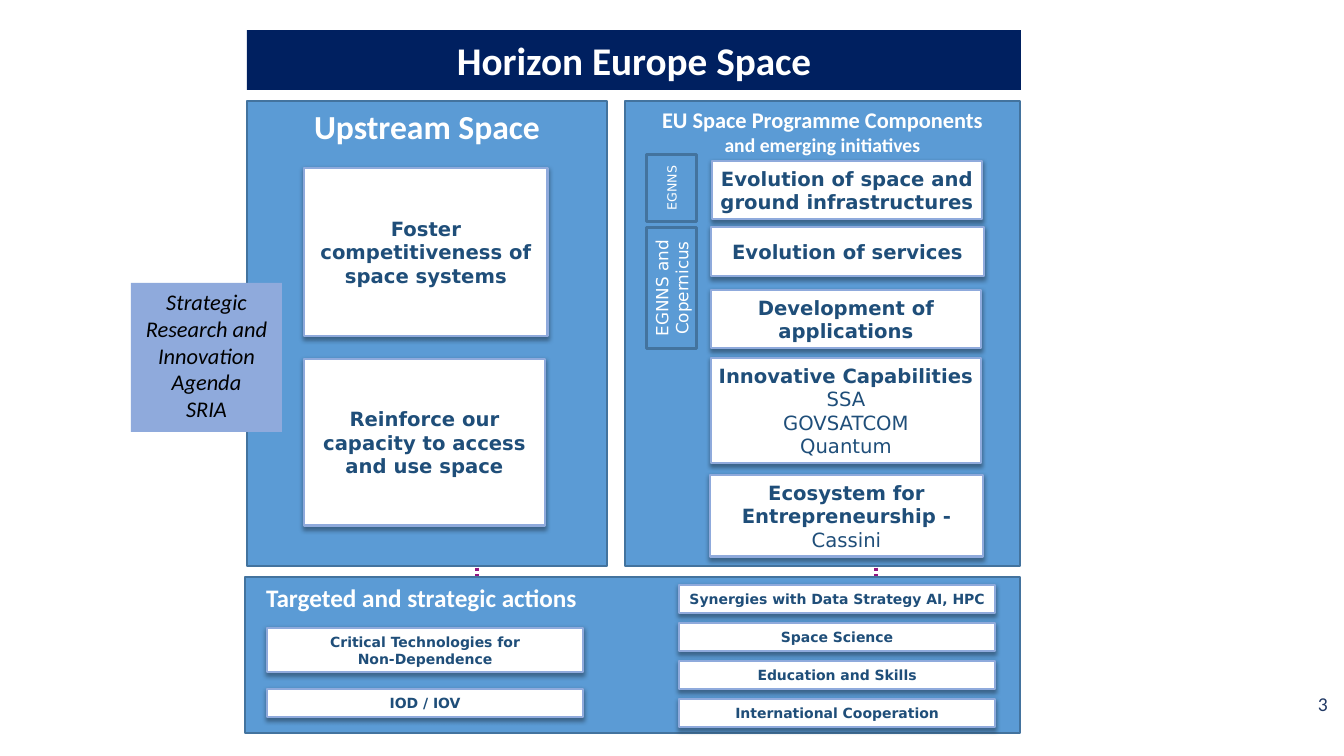
from dataclasses import dataclass

from lxml import etree
from pptx import Presentation
from pptx.dml.color import RGBColor
from pptx.enum.dml import MSO_LINE
from pptx.enum.shapes import MSO_CONNECTOR, MSO_SHAPE
from pptx.enum.text import MSO_ANCHOR, MSO_AUTO_SIZE, PP_ALIGN
from pptx.oxml.ns import qn
from pptx.util import Pt

RECT = MSO_SHAPE.RECTANGLE
STRAIGHT = MSO_CONNECTOR.STRAIGHT
DOTTED = MSO_LINE.ROUND_DOT
TOP, MIDDLE = MSO_ANCHOR.TOP, MSO_ANCHOR.MIDDLE
LEFT, CENTER, RIGHT = PP_ALIGN.LEFT, PP_ALIGN.CENTER, PP_ALIGN.RIGHT
NO_AUTOFIT = MSO_AUTO_SIZE.NONE
EMU_PER_PX = 914400 / 100.8


@dataclass(frozen=True)
class Theme:
    white: str = "FFFFFF"
    black: str = "000000"
    navy: str = "002060"
    panel: str = "5B9BD5"
    panel_edge: str = "43739E"
    card_edge: str = "8FAADC"
    card_text: str = "1F4E79"
    dots: str = "931680"
    number: str = "203864"
    heading_font: str = "Calibri"
    card_font: str = "DejaVu Sans"
    title: int = 28
    heading: int = 24
    subheading: int = 18
    body: int = 16
    card: int = 14
    label: int = 12
    action: int = 10
    small_label: int = 9


THEME = Theme()


def px(length):
    return round(length * EMU_PER_PX)


def rgb(color):
    return RGBColor.from_string(color)


def write(shape, *paragraphs, size, color=THEME.white, font=THEME.heading_font,
          bold=False, italic=False, align=CENTER, anchor=MIDDLE, insets=(10, 5, 10, 5)):
    """Each paragraph is a string or a list of (text, size, bold) runs."""
    frame = shape.text_frame
    frame.word_wrap = True
    frame.auto_size = NO_AUTOFIT
    frame.vertical_anchor = anchor
    (frame.margin_left, frame.margin_top,
     frame.margin_right, frame.margin_bottom) = map(px, insets)
    for index, content in enumerate(paragraphs):
        paragraph = frame.add_paragraph() if index else frame.paragraphs[0]
        paragraph.alignment = align
        runs = [(content, size, bold)] if isinstance(content, str) else content
        for text, run_size, run_bold in runs:
            run = paragraph.add_run()
            run.text = text
            run.font.name = font
            run.font.size = Pt(run_size)
            run.font.bold = run_bold
            run.font.italic = italic
            run.font.color.rgb = rgb(color)


def block(slide, box, fill=None, edge=None, width=1):
    shape = slide.shapes.add_shape(RECT, *map(px, box))
    shape.shadow.inherit = False
    if fill:
        shape.fill.solid()
        shape.fill.fore_color.rgb = rgb(fill)
    else:
        shape.fill.background()
    if edge:
        shape.line.color.rgb = rgb(edge)
        shape.line.width = Pt(width)
    else:
        shape.line.fill.background()
    return shape


def panel(slide, box):
    return block(slide, box, THEME.panel, THEME.panel_edge)


def card(slide, origin, place, *paragraphs, size=THEME.card):
    """White card with a soft shadow, placed relative to its panel."""
    x, y, width, height = place
    shape = block(slide, (origin[0] + x, origin[1] + y, width, height),
                  THEME.white, THEME.card_edge, 2)
    effects = shape._element.spPr.find(qn("a:effectLst"))
    shadow = etree.SubElement(effects, qn("a:outerShdw"), blurRad=str(Pt(3)),
                              dist=str(Pt(1.8)), dir="5400000", rotWithShape="0")
    shade = etree.SubElement(shadow, qn("a:srgbClr"), val=THEME.black)
    etree.SubElement(shade, qn("a:alpha"), val="35000")
    write(shape, *paragraphs, size=size, color=THEME.card_text,
          font=THEME.card_font, bold=True, insets=(5, 5, 5, 5))


def side_label(slide, origin, place, text, size, anchor):
    """Outlined label turned to read upwards."""
    x, y, width, height = place
    shape = block(slide, (origin[0] + x, origin[1] + y, width, height),
                  edge=THEME.panel_edge, width=1.75)
    shape.rotation = 270
    write(shape, text, size=size, font=THEME.card_font, anchor=anchor)


def dotted_links(slide, box):
    left, top, width, height = box
    for x in (left, left + width):
        link = slide.shapes.add_connector(
            STRAIGHT, px(x), px(top), px(x), px(top + height))
        link.line.color.rgb = rgb(THEME.dots)
        link.line.width = Pt(2.25)
        link.line.dash_style = DOTTED
        etree.SubElement(link._element.spPr, qn("a:effectLst"))


def title_bar(slide, box):
    title = slide.shapes.title
    title.left, title.top, title.width, title.height = map(px, box)
    title.fill.solid()
    title.fill.fore_color.rgb = rgb(THEME.navy)
    write(title, "Horizon Europe Space", size=THEME.title, bold=True)


def upstream(slide, box):
    write(panel(slide, box), "Upstream Space", size=THEME.heading,
          bold=True, anchor=TOP)
    card(slide, box, (57, 67, 244, 168), "Foster competitiveness of space systems")
    card(slide, box, (57, 258, 241, 167),
         "Reinforce our capacity to access and use space")


def programme_components(slide, box):
    write(panel(slide, box), "EU Space Programme Components",
          [("and emerging initiatives", THEME.card, True)],
          size=THEME.body, bold=True, anchor=TOP)
    capabilities = [[(name, THEME.card, False)]
                    for name in ("SSA", "GOVSATCOM", "Quantum")]
    ecosystem = [("Ecosystem for Entrepreneurship - ", THEME.card, True),
                 ("Cassini", THEME.card, False)]
    for place, paragraphs in (
        ((87, 60, 270, 58), ["Evolution of space and ground infrastructures"]),
        ((86, 126, 273, 49), ["Evolution of services"]),
        ((86, 189, 270, 58), ["Development of applications"]),
        ((86, 257, 270, 105), ["Innovative Capabilities", *capabilities]),
        ((85, 374, 273, 82), [ecosystem]),
    ):
        card(slide, box, place, *paragraphs)
    side_label(slide, box, (13, 62, 67, 50), "EGNNS", THEME.small_label, MIDDLE)
    side_label(slide, box, (-14, 162, 121, 50), "EGNNS and Copernicus",
               THEME.label, TOP)


def targeted_actions(slide, box):
    write(panel(slide, box), "Targeted and strategic actions",
          size=THEME.subheading, bold=True, align=LEFT, anchor=TOP,
          insets=(21, 5, 10, 5))
    card(slide, box, (22, 51, 316, 44), "Critical Technologies for",
         "Non-Dependence", size=THEME.action)
    card(slide, box, (22, 112, 316, 28), "IOD / IOV", size=THEME.action)
    actions = ("Synergies with Data Strategy AI, HPC", "Space Science",
               "Education and Skills", "International Cooperation")
    for row, action in enumerate(actions):
        card(slide, box, (434, 8 + 38 * row, 316, 28), action, size=THEME.action)


def research_agenda(slide, box):
    write(block(slide, box, THEME.card_edge),
          "Strategic Research and Innovation Agenda", "SRIA",
          size=THEME.body, color=THEME.black, italic=True, anchor=TOP)


def page_number(slide, box):
    number = slide.shapes.add_textbox(*map(px, box))
    write(number, "3", size=THEME.card, color=THEME.number, align=RIGHT)


def main():
    deck = Presentation()
    deck.slide_width, deck.slide_height = px(1344), px(756)
    slide = deck.slides.add_slide(deck.slide_layouts[5])
    dotted_links(slide, (477, 411, 399, 187))
    title_bar(slide, (247, 30, 774, 60))
    targeted_actions(slide, (245, 577, 775, 156))
    programme_components(slide, (625, 101, 395, 465))
    upstream(slide, (247, 101, 360, 465))
    research_agenda(slide, (131, 283, 151, 149))
    page_number(slide, (1276, 684, 62, 40))
    deck.save("out.pptx")


if __name__ == "__main__":
    main()
